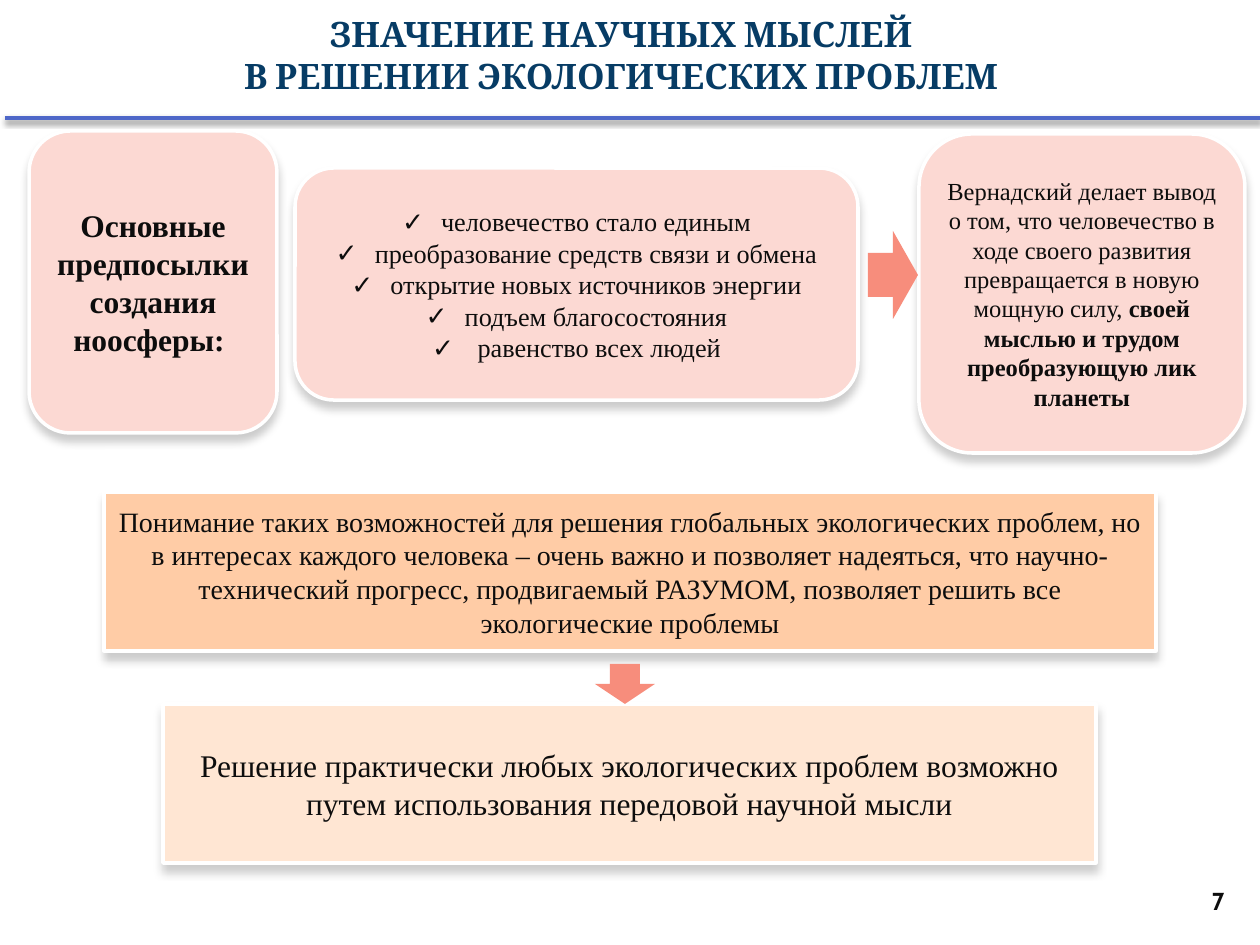
import pptx
import pptx.util
import pptx.dml.color
import pptx.enum.shapes
import pptx.enum.text
import pptx.oxml
import pptx.oxml.ns

SHAPE = pptx.enum.shapes.MSO_SHAPE
ALIGN = pptx.enum.text.PP_ALIGN
COLORS = {
    "pink": "FCD9D3", "orange": "FFCCA6", "cream": "FFE6D3", "arrow": "F78D7C",
    "border": "FFFFFF", "text": "0D0D0D", "title": "073C65", "rule": "4E67C8",
}
BODY_FONT = "Times New Roman"
TITLE = ["ЗНАЧЕНИЕ НАУЧНЫХ МЫСЛЕЙ ", "В РЕШЕНИИ ЭКОЛОГИЧЕСКИХ ПРОБЛЕМ "]
PREMISES = [
    "человечество стало единым",
    "преобразование средств связи и обмена",
    "открытие новых источников энергии",
    "подъем благосостояния",
    " равенство всех людей",
]
CONCLUSION = [
    ("Вернадский делает вывод о том, что человечество в ходе своего развития "
     "превращается в новую мощную силу, ", False),
    ("своей мыслью и трудом преобразующую лик планеты", True),
]
UNDERSTANDING = (
    "Понимание таких возможностей для решения глобальных экологических проблем, "
    "но в интересах каждого человека – очень важно и позволяет надеяться, что "
    "научно-технический прогресс, продвигаемый РАЗУМОМ, позволяет решить все "
    "экологические проблемы"
)
SOLUTION = (
    "Решение практически любых экологических проблем возможно "
    "путем использования передовой научной мысли"
)
CARDS = [
    (SHAPE.ROUNDED_RECTANGLE, (295, 168, 563, 232), "pink", 15,
     [[(premise, False)] for premise in PREMISES], True),
    (SHAPE.ROUNDED_RECTANGLE, (29, 131, 248, 302), "pink", 18,
     [[("Основные предпосылки создания ноосферы: ", True)]], False),
    (SHAPE.ROUNDED_RECTANGLE, (919, 134, 326, 319), "pink", 14, [CONCLUSION], False),
    (SHAPE.RECTANGLE, (104, 492, 1052, 159), "orange", 16, [[(UNDERSTANDING, False)]], False),
    (SHAPE.RECTANGLE, (163, 704, 933, 159), "cream", 18, [[(SOLUTION, False)]], False),
]
ARROWS = [
    (SHAPE.RIGHT_ARROW, (868, 231, 50, 88)),
    (SHAPE.DOWN_ARROW, (595, 664, 60, 40)),
]


def px(value):
    return pptx.util.Emu(round(value * 914400 / 126))


def rgb(name):
    return pptx.dml.color.RGBColor.from_string(COLORS[name])


def add_effects(shape, opacity, blur, distance):
    properties = shape._element.spPr
    for old in properties.findall(pptx.oxml.ns.qn("a:effectLst")):
        properties.remove(old)
    properties.append(pptx.oxml.parse_xml(
        f'<a:effectLst {pptx.oxml.ns.nsdecls("a")}>'
        f'<a:outerShdw blurRad="{pptx.util.Pt(blur)}" dist="{pptx.util.Pt(distance)}" '
        'dir="5400000" rotWithShape="0"><a:srgbClr val="000000">'
        f'<a:alpha val="{opacity * 1000}"/></a:srgbClr></a:outerShdw></a:effectLst>'))


def add_check_bullet(paragraph):
    properties = paragraph._p.get_or_add_pPr()
    indent = pptx.util.Inches(0.31)
    properties.set("marL", str(indent))
    properties.set("indent", str(-indent))
    for tag in ('a:buFont {} typeface="Wingdings"', 'a:buChar {} char="✓"'):
        if "buFont" in tag:
            tag = tag.replace("Wingdings", "Segoe UI Symbol")
        properties.append(pptx.oxml.parse_xml(
            "<" + tag.format(pptx.oxml.ns.nsdecls("a")) + "/>"))


def fill_text(shape, paragraphs, size, font, color, align=ALIGN.CENTER, checked=False):
    frame = shape.text_frame
    frame.word_wrap = True
    frame.auto_size = pptx.enum.text.MSO_AUTO_SIZE.NONE
    frame.vertical_anchor = pptx.enum.text.MSO_ANCHOR.MIDDLE
    for index, runs in enumerate(paragraphs):
        paragraph = frame.add_paragraph() if index else frame.paragraphs[0]
        paragraph.alignment = align
        if checked:
            add_check_bullet(paragraph)
        for text, bold in runs:
            run = paragraph.add_run()
            run.text = text
            run.font.name = font
            run.font.size = pptx.util.Pt(size)
            run.font.bold = bold
            run.font.color.rgb = rgb(color)


def add_filled_shape(slide, kind, box, color):
    shape = slide.shapes.add_shape(kind, *map(px, box))
    shape.shadow.inherit = False
    shape.fill.solid()
    shape.fill.fore_color.rgb = rgb(color)
    shape.line.fill.background()
    return shape


def main():
    presentation = pptx.Presentation()
    presentation.slide_width, presentation.slide_height = px(1260), px(945)
    slide = presentation.slides.add_slide(presentation.slide_layouts[5])

    title = slide.shapes.title
    title.left, title.top, title.width, title.height = map(px, (5, -24, 1240, 158))
    fill_text(title, [[(line, True)] for line in TITLE], 20, "Cambria", "title")

    for kind, box, color, size, paragraphs, checked in CARDS:
        card = add_filled_shape(slide, kind, box, color)
        card.line.color.rgb = rgb("border")
        card.line.width = pptx.util.Pt(2)
        add_effects(card, 20, 5, 4)
        fill_text(card, paragraphs, size, BODY_FONT, "text", checked=checked)

    for kind, box in ARROWS:
        add_filled_shape(slide, kind, box, "arrow")

    number = slide.shapes.add_textbox(*map(px, (1172, 876, 65, 49)))
    fill_text(number, [[("7", True)]], 14, "Cabin", "text", ALIGN.RIGHT)

    rule = slide.shapes.add_connector(
        pptx.enum.shapes.MSO_CONNECTOR.STRAIGHT, px(5), px(118), px(1260), px(118))
    rule.line.color.rgb = rgb("rule")
    rule.line.width = pptx.util.Pt(2)
    add_effects(rule, 45, 3.1, 1.8)

    presentation.save("out.pptx")


if __name__ == "__main__":
    main()
